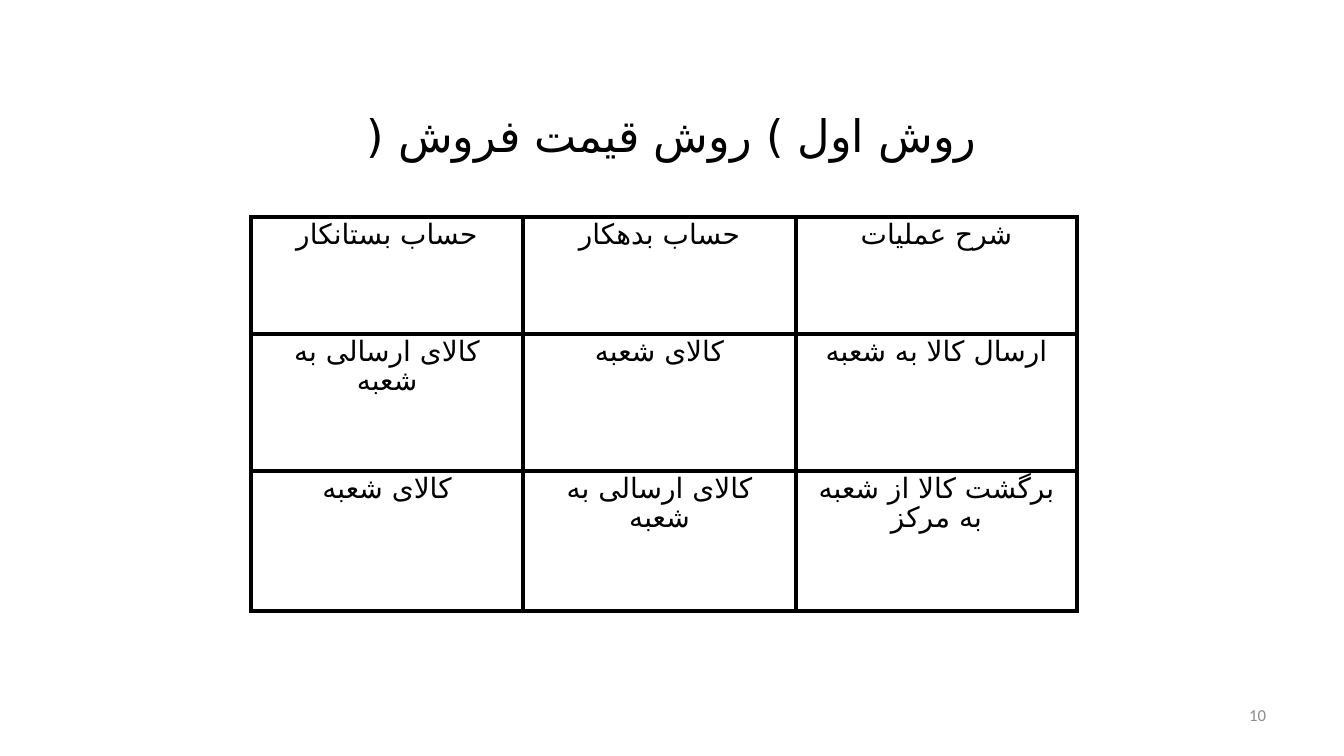
import pptx
import pptx.util
import pptx.dml.color
import pptx.enum.text
import pptx.oxml.ns
from lxml import etree

PX_PER_INCH = 100.8
ALIGN = pptx.enum.text.PP_ALIGN
ANCHOR = pptx.enum.text.MSO_ANCHOR
INK = "000000"
WHITE = "FFFFFF"
ARABIC_FONT = "DejaVu Sans"

COLUMN_WIDTHS = [272, 273, 281]
ROW_HEIGHTS = [117, 137, 140]
ENTRIES = [
    ["حساب بستانکار", "حساب بدهکار", "شرح عمليات"],
    ["کالای ارسالی به شعبه", "کالای شعبه", "ارسال کالا به شعبه"],
    ["کالای شعبه", "کالای ارسالی به شعبه", "برگشت کالا از شعبه به مرکز"],
]


def px(length):
    return pptx.util.Emu(round(length * 914400 / PX_PER_INCH))


def color(hex_string):
    return pptx.dml.color.RGBColor.from_string(hex_string)


def add_child(parent, tag, **attributes):
    return etree.SubElement(parent, pptx.oxml.ns.qn(tag), **attributes)


def write(frame, text, font, size, ink, align):
    """Fill a text frame with one paragraph and return it."""
    frame.word_wrap = True
    para = frame.paragraphs[0]
    para.text = text
    para.alignment = align
    para.font.name = font
    para.font.size = pptx.util.Pt(size)
    para.font.color.rgb = color(ink)
    # Arabic script takes its typeface from the complex-script font
    defaults = para._p.pPr.find(pptx.oxml.ns.qn("a:defRPr"))
    add_child(defaults, "a:cs", typeface=ARABIC_FONT)
    return para


def add_title(page, left, top, width, height):
    box = page.shapes.add_textbox(px(left), px(top), px(width), px(height))
    box.text_frame.vertical_anchor = ANCHOR.TOP
    para = write(box.text_frame, "روش اول ) روش قيمت فروش (", "Arial", 32, INK, ALIGN.CENTER)
    para._p.pPr.set("rtl", "1")


def add_borders(cell, ink, points):
    properties = cell._tc.get_or_add_tcPr()
    for side in ("a:lnL", "a:lnR", "a:lnT", "a:lnB"):
        line = add_child(properties, side, w=str(pptx.util.Pt(points)))
        add_child(add_child(line, "a:solidFill"), "a:srgbClr", val=ink)


def add_accounts_table(page, left, top):
    frame = page.shapes.add_table(
        len(ROW_HEIGHTS), len(COLUMN_WIDTHS), px(left), px(top),
        px(sum(COLUMN_WIDTHS)), px(sum(ROW_HEIGHTS)))
    table = frame.table
    table.first_row = False
    table.horz_banding = False
    for column, width in zip(table.columns, COLUMN_WIDTHS):
        column.width = px(width)
    for row, height, texts in zip(table.rows, ROW_HEIGHTS, ENTRIES):
        row.height = px(height)
        for cell, text in zip(row.cells, texts):
            # Borders come before the fill in the cell properties
            add_borders(cell, INK, 3)
            cell.fill.solid()
            cell.fill.fore_color.rgb = color(WHITE)
            para = write(cell.text_frame, text, "Lato", 20, INK, ALIGN.CENTER)
            para.line_spacing = 0.87


def add_page_number(page, left, top, width, height):
    box = page.shapes.add_textbox(px(left), px(top), px(width), px(height))
    box.text_frame.vertical_anchor = ANCHOR.MIDDLE
    write(box.text_frame, "10", "Calibri", 12, "8C8C8C", ALIGN.RIGHT)


def main():
    deck = pptx.Presentation()
    deck.slide_width = px(1344)
    deck.slide_height = px(756)
    page = deck.slides.add_slide(deck.slide_layouts[6])
    add_page_number(page, 963, 688, 313, 53)
    add_accounts_table(page, 251, 217)
    add_title(page, 283, 103, 778, 111)
    deck.save("out.pptx")


if __name__ == "__main__":
    main()
